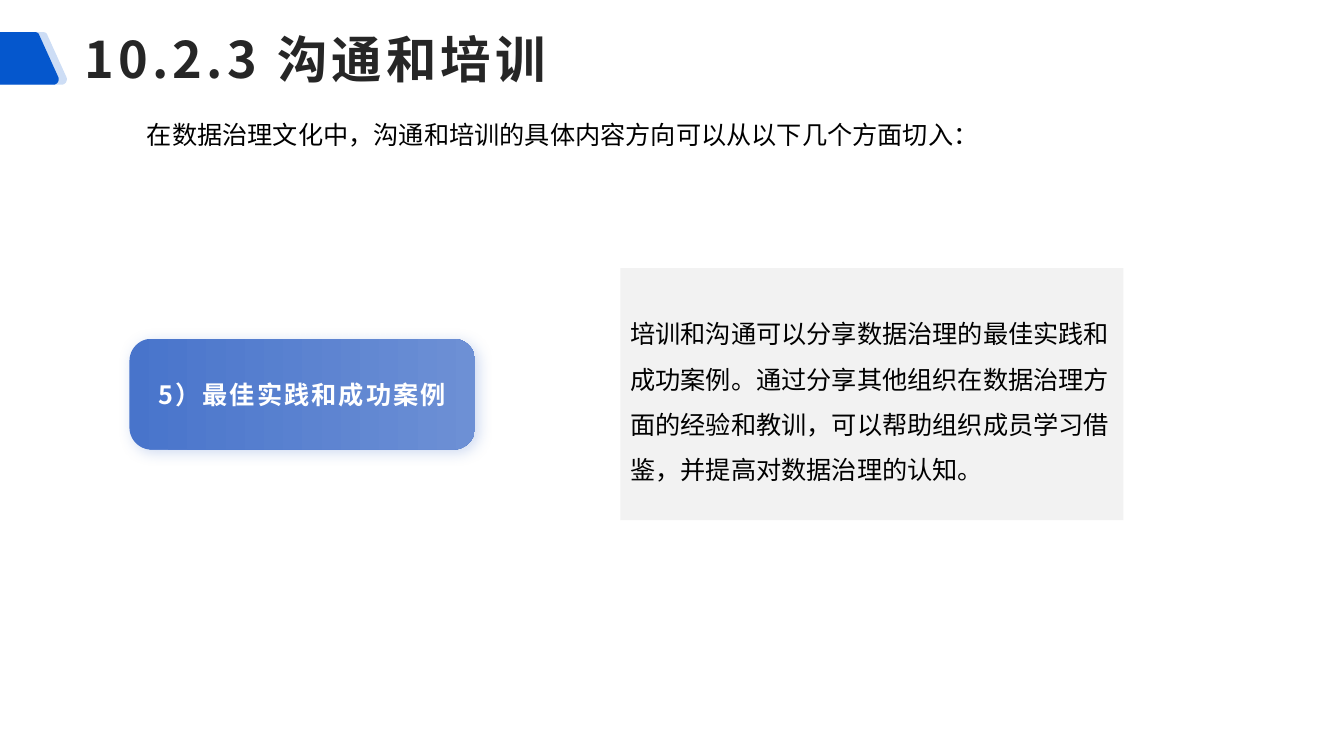
import dataclasses
from typing import Any

import pptx
import pptx.dml.color
import pptx.enum.lang
import pptx.enum.shapes
import pptx.enum.text
import pptx.oxml
import pptx.oxml.ns
import pptx.util

Pt = pptx.util.Pt
ALIGN = pptx.enum.text.PP_ALIGN
ANCHOR = pptx.enum.text.MSO_ANCHOR
SHAPE = pptx.enum.shapes.MSO_SHAPE
CJK_FONT = "Noto Sans CJK SC"
BLUE = "0557CD"
CARD_START, CARD_END = "4874CB", "6D90D5"

TAB_CORNERS = (
    ((-4.3, 25.2), (-3.6, 23.8), (-2.9, 23), (-1.4, 23)),
    ((25.2, 23), (26.6, 23), (27.7, 23.8), (28.1, 25.2)),
    ((41.8, 55.4), (42.5, 57.6), (41, 60.5), (38.2, 60.5)),
    ((-14.4, 60.5), (-17.3, 60.5), (-18.7, 57.6), (-18, 55.4)),
)
CURVE_STEPS = 8


@dataclasses.dataclass(frozen=True)
class Box:
    left: float
    top: float
    width: float
    height: float


@dataclasses.dataclass(frozen=True)
class TextStyle:
    size: float
    color: str
    font: str = CJK_FONT
    bold: bool = False
    spacing: float = 0
    align: Any = ALIGN.LEFT
    line_spacing: float = 1.0
    anchor: Any = ANCHOR.MIDDLE
    insets: tuple[float, float] = (7.2, 3.6)


@dataclasses.dataclass(frozen=True)
class TitleTab:
    offset: float
    opacity: int


def rgb(value: str) -> pptx.dml.color.RGBColor:
    return pptx.dml.color.RGBColor.from_string(value)


def apply(target: Any, values: dict[str, Any]) -> None:
    for name, value in values.items():
        setattr(target, name, value)


def place(shape: Any, box: Box) -> None:
    apply(shape, {name: Pt(value) for name, value in dataclasses.asdict(box).items()})


def fill_solid(shape: Any, color: str) -> None:
    shape.fill.solid()
    shape.fill.fore_color.rgb = rgb(color)
    shape.line.fill.background()
    shape.shadow.inherit = False


def write(shape: Any, text: str, style: TextStyle) -> None:
    frame = shape.text_frame
    horizontal, vertical = map(Pt, style.insets)
    apply(frame, {
        "word_wrap": True,
        "auto_size": pptx.enum.text.MSO_AUTO_SIZE.NONE,
        "vertical_anchor": style.anchor,
        "margin_left": horizontal, "margin_right": horizontal,
        "margin_top": vertical, "margin_bottom": vertical,
    })
    paragraph = frame.paragraphs[0]
    apply(paragraph, {"alignment": style.align, "line_spacing": style.line_spacing})
    run = paragraph.add_run()
    run.text = text
    apply(run.font, {
        "size": Pt(style.size), "name": style.font, "bold": style.bold,
        "language_id": pptx.enum.lang.MSO_LANGUAGE_ID.SIMPLIFIED_CHINESE,
    })
    run.font.color.rgb = rgb(style.color)
    properties = run.font._element
    properties.set("spc", str(round(style.spacing * 100)))
    latin = properties.find(pptx.oxml.ns.qn("a:latin"))
    latin.addnext(pptx.oxml.parse_xml(
        f'<a:ea {pptx.oxml.ns.nsdecls("a")} typeface="{CJK_FONT}"/>'))


def curve_point(corner: tuple, step: int) -> tuple[float, float]:
    t = step / CURVE_STEPS
    weights = ((1 - t) ** 3, 3 * t * (1 - t) ** 2, 3 * t ** 2 * (1 - t), t ** 3)
    return tuple(sum(w * point[axis] for w, point in zip(weights, corner)) for axis in (0, 1))


def draw_tab(slide: Any, tab: TitleTab) -> None:
    points = [curve_point(corner, step) for corner in TAB_CORNERS for step in range(CURVE_STEPS + 1)]
    outline = [(Pt(x + tab.offset), Pt(y)) for x, y in points]
    builder = slide.shapes.build_freeform(*outline[0])
    builder.add_line_segments(outline[1:], close=True)
    shape = builder.convert_to_shape()
    fill_solid(shape, BLUE)
    if tab.opacity < 100:
        color = shape._element.spPr.find(".//" + pptx.oxml.ns.qn("a:srgbClr"))
        color.append(pptx.oxml.parse_xml(
            f'<a:alpha {pptx.oxml.ns.nsdecls("a")} val="{tab.opacity * 1000}"/>'))


def draw_card(slide: Any, box: Box) -> Any:
    card = slide.shapes.add_shape(SHAPE.ROUNDED_RECTANGLE, 0, 0, 0, 0)
    place(card, box)
    card.adjustments[0] = 0.2
    card.line.fill.background()
    card.fill.gradient()
    card.fill.gradient_angle = 0
    for stop, color in zip(card.fill.gradient_stops, (CARD_START, CARD_END)):
        stop.color.rgb = rgb(color)
    card.shadow.inherit = False
    effects = card._element.spPr.find(pptx.oxml.ns.qn("a:effectLst"))
    effects.append(pptx.oxml.parse_xml(
        f'<a:outerShdw {pptx.oxml.ns.nsdecls("a")} blurRad="{Pt(10)}" dist="{Pt(3)}" '
        f'dir="{45 * 60000}" algn="tl" rotWithShape="0"><a:srgbClr val="{CARD_START}">'
        '<a:alpha val="25000"/></a:srgbClr></a:outerShdw>'))
    return card


def main() -> None:
    presentation = pptx.Presentation()
    apply(presentation, {"slide_width": Pt(960), "slide_height": Pt(540)})
    slide = presentation.slides.add_slide(presentation.slide_layouts[5])

    for tab in (TitleTab(5.8, 20), TitleTab(0, 100)):
        draw_tab(slide, tab)

    title = slide.shapes.title
    place(title, Box(53.3, 5.8, 906.5, 72))
    write(title, "10.2.3 沟通和培训", TextStyle(36, "262626", bold=True, spacing=3))

    card = draw_card(slide, Box(92.5, 242, 247, 79.2))
    write(card, "5）最佳实践和成功案例", TextStyle(
        18, "FFFFFF", bold=True, spacing=1.5, align=ALIGN.CENTER, insets=(0, 0)))

    panel = slide.shapes.add_shape(SHAPE.RECTANGLE, 0, 0, 0, 0)
    place(panel, Box(443.2, 191.5, 359.3, 180))
    fill_solid(panel, "F2F2F2")
    write(panel, "培训和沟通可以分享数据治理的最佳实践和成功案例。通过分享其他组织在数据治理方面的"
          "经验和教训，可以帮助组织成员学习借鉴，并提高对数据治理的认知。",
          TextStyle(18, "000000", font="Times New Roman", line_spacing=1.5))

    introduction = slide.shapes.add_textbox(0, 0, 0, 0)
    place(introduction, Box(97.9, 81.4, 707.8, 28.8))
    write(introduction, "在数据治理文化中，沟通和培训的具体内容方向可以从以下几个方面切入：",
          TextStyle(18, "000000", font="Arial", anchor=ANCHOR.TOP))

    presentation.save("out.pptx")


if __name__ == "__main__":
    main()
